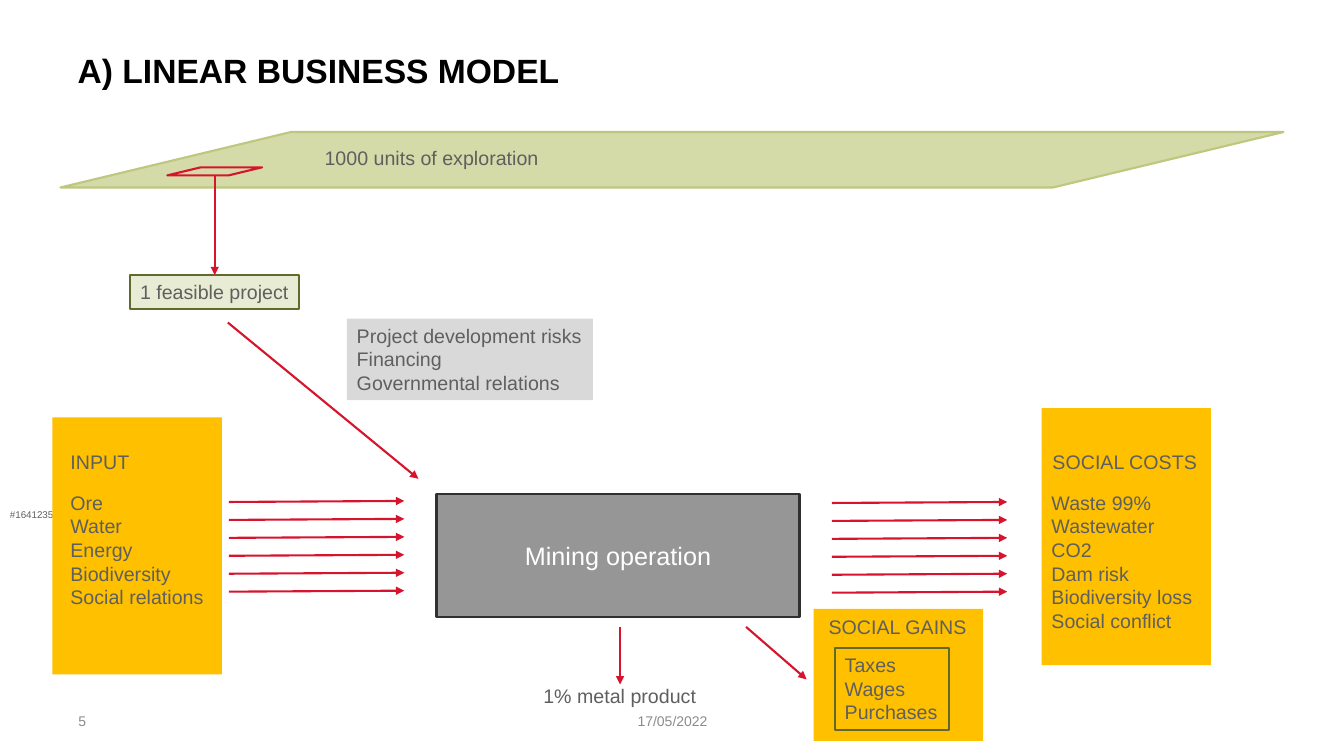
from dataclasses import dataclass

import pptx
import pptx.dml.color
import pptx.enum.shapes
import pptx.enum.text
import pptx.oxml.ns
import pptx.util
from lxml import etree

Inches, Pt = pptx.util.Inches, pptx.util.Pt
MSO_SHAPE = pptx.enum.shapes.MSO_SHAPE
ANCHOR = pptx.enum.text.MSO_ANCHOR
ALIGN = pptx.enum.text.PP_ALIGN
AUTO_SIZE = pptx.enum.text.MSO_AUTO_SIZE


@dataclass(frozen=True)
class Theme:
    font: str = "Arial"
    title: str = "000000"
    text: str = "5F5F5F"
    footer: str = "8C8C8C"
    white: str = "FFFFFF"
    arrow: str = "D7142D"
    panel: str = "FFC000"
    land: str = "D4DAA8"
    land_edge: str = "BEC77D"
    project: str = "E9ECD4"
    olive: str = "62692D"
    risk: str = "D9D9D9"
    mine: str = "969696"
    mine_edge: str = "303030"
    title_size: int = 24
    mine_size: int = 18
    body_size: int = 14
    footer_size: int = 10
    mark_size: int = 7
    line_width: float = 1.5


T = Theme()


@dataclass(frozen=True)
class Area:
    """A filled or outlined shape; slant is the parallelogram adjustment."""
    at: tuple[float, float, float, float]
    fill: str | None = None
    edge: str | None = None
    slant: float | None = None


@dataclass(frozen=True)
class Label:
    """Text, on an area or in a plain text box; fitted labels do not wrap."""
    at: tuple[float, float, float, float]
    lines: tuple[str, ...]
    size: int = T.body_size
    color: str = T.text
    align: ALIGN = ALIGN.LEFT
    fitted: bool = True
    fill: str | None = None
    edge: str | None = None


@dataclass(frozen=True)
class Arrow:
    start: tuple[float, float]
    end: tuple[float, float]


def rgb(value: str) -> pptx.dml.color.RGBColor:
    return pptx.dml.color.RGBColor.from_string(value)


def add_area(s, area: Area):
    kind = MSO_SHAPE.PARALLELOGRAM if area.slant else MSO_SHAPE.RECTANGLE
    sp = s.shapes.add_shape(kind, *map(Inches, area.at))
    sp.shadow.inherit = False
    if area.slant:
        sp.adjustments[0] = area.slant
    if area.fill:
        sp.fill.solid()
        sp.fill.fore_color.rgb = rgb(area.fill)
    else:
        sp.fill.background()
    if area.edge:
        sp.line.color.rgb = rgb(area.edge)
        sp.line.width = Pt(T.line_width)
    else:
        sp.line.fill.background()
    return sp


def add_run(p, text: str, size: int, color: str, bold: bool = False) -> None:
    r = p.add_run()
    r.text = text
    r.font.name = T.font
    r.font.size = Pt(size)
    r.font.bold = bold
    r.font.color.rgb = rgb(color)


def add_label(s, label: Label):
    if label.fill or label.edge:
        sp = add_area(s, Area(label.at, label.fill, label.edge))
    else:
        sp = s.shapes.add_textbox(*map(Inches, label.at))
    tf = sp.text_frame
    tf.word_wrap = not label.fitted
    tf.auto_size = AUTO_SIZE.SHAPE_TO_FIT_TEXT if label.fitted else AUTO_SIZE.NONE
    tf.vertical_anchor = ANCHOR.TOP if label.fitted else ANCHOR.MIDDLE
    for i, line in enumerate(label.lines):
        p = tf.add_paragraph() if i else tf.paragraphs[0]
        p.alignment = label.align
        add_run(p, line, label.size, label.color)
    return sp


def add_arrow(s, arrow: Arrow):
    line = s.shapes.add_connector(pptx.enum.shapes.MSO_CONNECTOR.STRAIGHT,
                                  *map(Inches, arrow.start + arrow.end))
    line.line.color.rgb = rgb(T.arrow)
    line.line.width = Pt(T.line_width)
    qn = pptx.oxml.ns.qn
    etree.SubElement(line.line._get_or_add_ln(), qn("a:tailEnd"), type="triangle")
    etree.SubElement(line._element.spPr, qn("a:effectLst"))
    return line


def add_flow(s, left: float, top: float) -> None:
    """Six parallel arrows, one below the other, each rising slightly."""
    count, height, length, rise = 6, 0.89, 1.74, 0.01
    for i in range(count):
        y = top + i * height / (count - 1)
        add_arrow(s, Arrow((left, y), (left + length, y - rise)))


def add_title(s, text: str) -> None:
    sp = s.shapes.title
    sp.left, sp.top, sp.width, sp.height = map(Inches, (0.67, 0.39, 12.01, 1.09))
    tf = sp.text_frame
    tf.vertical_anchor = ANCHOR.TOP
    tf.margin_top = Inches(0.1)
    p = tf.paragraphs[0]
    p.alignment = ALIGN.LEFT
    add_run(p, text, T.title_size, T.title, bold=True)


MARK = Label((0, 5, 0.32, 0.69), ("#16412355v1",), T.mark_size)
AREAS = (
    Area((8.07, 6.04, 1.68, 1.31), T.panel),
    Area((10.33, 4.05, 1.68, 2.55), T.panel),
    Area((0.52, 4.14, 1.68, 2.55), T.panel),
    Area((0.6, 1.31, 12.13, 0.55), T.land, T.land_edge, 4.155),
    Area((1.66, 1.66, 0.94, 0.08), None, T.arrow, 4.155),
)
PROJECT = Label((1.29, 2.73, 1.68, 0.34), ("1 feasible project",),
                fill=T.project, edge=T.olive)
LABELS = (
    Label((5.41, 7.03, 2.52, 0.24), ("17/05/2022",), T.footer_size, T.footer,
          ALIGN.CENTER, fitted=False),
    Label((0.68, 7.03, 0.73, 0.24), ("5",), T.footer_size, T.footer, fitted=False),
    Label((3.12, 1.4, 2.41, 0.34), ("1000 units of exploration",)),
    Label((3.44, 3.16, 2.44, 0.81),
          ("Project development risks", "Financing", "Governmental relations"),
          fill=T.risk),
    Label((0.6, 4.41, 0.79, 0.34), ("INPUT",)),
    Label((0.6, 4.82, 1.53, 1.51),
          ("Ore", "Water", "Energy", "Biodiversity", "Social relations")),
    Label((4.33, 4.9, 3.6, 1.22), ("Mining operation",), T.mine_size, T.white,
          ALIGN.CENTER, fitted=False, fill=T.mine, edge=T.mine_edge),
    Label((10.34, 4.41, 1.65, 0.34), ("SOCIAL COSTS",)),
    Label((10.33, 4.82, 1.61, 1.75),
          ("Waste 99%", "Wastewater", "CO2", "Dam risk", "Biodiversity loss",
           "Social conflict")),
    Label((5.29, 6.74, 1.73, 0.34), ("1% metal product",)),
    Label((8.12, 6.05, 1.58, 0.34), ("SOCIAL GAINS",)),
    Label((8.28, 6.43, 1.13, 0.81), ("Taxes", "Wages", "Purchases"), edge=T.olive),
)
TO_PROJECT = Arrow((2.13, 1.75), (2.13, 2.73))
ARROWS = (
    Arrow((2.26, 3.2), (4.15, 4.75)),
    Arrow((6.15, 6.22), (6.15, 6.79)),
    Arrow((7.4, 6.22), (8, 6.74)),
)


def main() -> None:
    prs = pptx.Presentation()
    prs.slide_width, prs.slide_height = Inches(13.33), Inches(7.5)
    s = prs.slides.add_slide(prs.slide_layouts[5])
    add_title(s, "A) LINEAR BUSINESS MODEL")
    mark = add_label(s, MARK)
    mark.text_frame._txBody.bodyPr.set("vert", "mongolianVert")
    for area in AREAS:
        add_area(s, area)
    project = add_label(s, PROJECT)
    for label in LABELS:
        add_label(s, label)
    add_arrow(s, TO_PROJECT).end_connect(project, 0)
    for arrow in ARROWS:
        add_arrow(s, arrow)
    add_flow(s, 2.27, 4.98)
    add_flow(s, 8.25, 4.99)
    prs.save("out.pptx")


if __name__ == "__main__":
    main()
